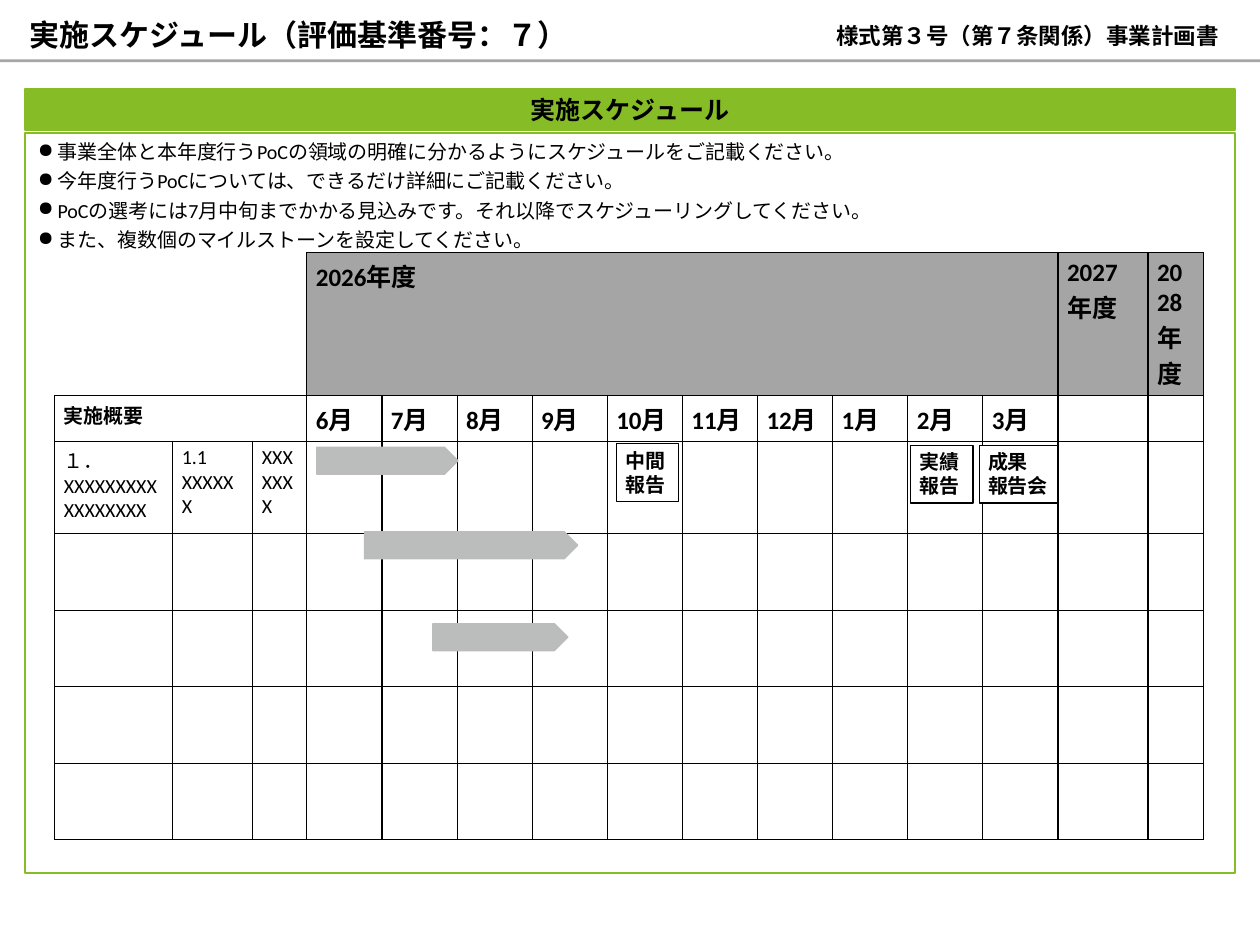
from lxml import etree
from pptx import Presentation
from pptx.dml.color import RGBColor
from pptx.enum import shapes, text
from pptx.oxml import ns
from pptx.util import Inches, Pt

COLORS = {"ink": "000000", "paper": "FFFFFF", "green": "86BC25", "gray": "A5A5A5", "bar": "BBBCBC"}
LATIN, JAPANESE = "Calibri", "Noto Sans CJK JP"
GUIDANCE = [
    "事業全体と本年度行うPoCの領域の明確に分かるようにスケジュールをご記載ください。",
    "今年度行うPoCについては、できるだけ詳細にご記載ください。",
    "PoCの選考には7月中旬までかかる見込みです。それ以降でスケジューリングしてください。",
    "また、複数個のマイルストーンを設定してください。",
]
MONTHS = [6, 7, 8, 9, 10, 11, 12, 1, 2, 3]
COLUMN_WIDTHS = [1.31, 0.89, 0.6] + [8.35 / len(MONTHS)] * len(MONTHS) + [1, 0.62]
ROW_HEIGHTS = [1.42, 0.5, 1.03] + [0.85] * 4
FISCAL_YEARS = {3: "2026年度", 13: "2027年度", 14: "2028年度"}
TASK = ["１．XXXXXXXXXXXXXXXXX", "1.1 XXXXXX", "XXXXXXX"]
BARS = [(3.52, 4.97, 1.57), (4.05, 5.91, 2.37), (4.81, 6.93, 1.5)]
MILESTONES = [
    (10.88, 4.95, 0.87, "成果\n報告会"),
    (10.12, 4.95, 0.69, "実績\n報告"),
    (6.85, 4.93, 0.69, "中間\n報告"),
]


def rgb(name):
    """Return the named colour."""
    return RGBColor.from_string(COLORS[name])


def write(frame, content, size, bold=True, align=text.PP_ALIGN.LEFT, latin=LATIN, east_asian=LATIN):
    """Fill a text frame and format its runs."""
    frame.text = content
    for paragraph in frame.paragraphs:
        paragraph.alignment = align
        for run in paragraph.runs:
            run.font.size, run.font.bold, run.font.name = Pt(size), bold, latin
            run.font.color.rgb = rgb("ink")
            etree.SubElement(run._r.get_or_add_rPr(), ns.qn("a:ea"), typeface=east_asian)


def set_insets(frame, horizontal, vertical):
    """Set equal side insets and equal top and bottom insets."""
    frame.margin_left = frame.margin_right = Inches(horizontal)
    frame.margin_top = frame.margin_bottom = Inches(vertical)


def add_block(slide, kind, place, fill, outline=None, width=1):
    """Add a filled preset shape."""
    block = slide.shapes.add_shape(kind, *map(Inches, place))
    block.shadow.inherit = False
    block.fill.solid()
    block.fill.fore_color.rgb = rgb(fill)
    if outline:
        block.line.color.rgb = rgb(outline)
        block.line.width = Pt(width)
    else:
        block.line.fill.background()
    return block


def add_heading(slide):
    """Place the title and the rule under it."""
    title = slide.shapes.title
    title.left, title.top, title.width, title.height = map(Inches, (0.33, 0.21, 6.87, 0.37))
    frame = title.text_frame
    set_insets(frame, 0, 0)
    frame.vertical_anchor = text.MSO_ANCHOR.BOTTOM
    write(frame, "実施スケジュール（評価基準番号：７）", 24)
    add_block(slide, shapes.MSO_SHAPE.RECTANGLE, (0, 0.66, 14, 0.03), "gray")


def add_form_label(slide):
    """Add the form number at the top right."""
    label = slide.shapes.add_textbox(*map(Inches, (9.11, 0.31, 4.61, 0.24)))
    frame = label.text_frame
    frame.word_wrap = True
    set_insets(frame, 0, 0)
    frame.vertical_anchor = text.MSO_ANCHOR.BOTTOM
    write(frame, "様式第３号（第７条関係）事業計画書", 18, True, text.PP_ALIGN.CENTER, JAPANESE, JAPANESE)


def add_panel(slide):
    """Add the green banner and the framed guidance list."""
    rectangle = shapes.MSO_SHAPE.RECTANGLE
    banner = add_block(slide, rectangle, (0.28, 0.99, 13.44, 0.46), "green", "green", 1.5).text_frame
    banner.word_wrap = False
    banner.vertical_anchor = text.MSO_ANCHOR.MIDDLE
    set_insets(banner, 0.14, 0.07)
    write(banner, "実施スケジュール", 20, align=text.PP_ALIGN.CENTER)

    guidance = add_block(slide, rectangle, (0.28, 1.48, 13.44, 8.22), "paper", "green", 1.5).text_frame
    guidance.word_wrap = True
    guidance.vertical_anchor = text.MSO_ANCHOR.TOP
    set_insets(guidance, 0.14, 0.07)
    write(guidance, "\n".join(GUIDANCE), 16, False)
    for index, paragraph in enumerate(guidance.paragraphs):
        paragraph.space_before = Pt(4.3 if index else 0)
        properties = paragraph._p.get_or_add_pPr()
        properties.set("marL", str(Inches(0.22)))
        properties.set("indent", str(-Inches(0.22)))
        etree.SubElement(properties, ns.qn("a:buChar"), char="●")


def set_borders(cell, hidden=""):
    """Draw the cell's edges, leaving out the hidden sides."""
    properties = cell._tc.get_or_add_tcPr()
    for index, side in enumerate("LRTB"):
        edge = etree.Element(ns.qn(f"a:ln{side}"), w=str(Pt(1)))
        if side in hidden:
            etree.SubElement(edge, ns.qn("a:noFill"))
        else:
            fill = etree.SubElement(edge, ns.qn("a:solidFill"))
            etree.SubElement(fill, ns.qn("a:srgbClr"), val=COLORS["ink"])
        properties.insert(index, edge)


def add_schedule(slide):
    """Add the schedule table."""
    place = map(Inches, (0.61, 2.81, sum(COLUMN_WIDTHS), sum(ROW_HEIGHTS)))
    schedule = slide.shapes.add_table(len(ROW_HEIGHTS), len(COLUMN_WIDTHS), *place).table
    schedule.first_row = schedule.horz_banding = False
    for column, width in zip(schedule.columns, COLUMN_WIDTHS):
        column.width = Inches(width)
    for row, height in zip(schedule.rows, ROW_HEIGHTS):
        row.height = Inches(height)
    for r in range(len(ROW_HEIGHTS)):
        for c in range(len(COLUMN_WIDTHS)):
            cell = schedule.cell(r, c)
            if r == 0 and c >= 3:
                cell.fill.solid()
                cell.fill.fore_color.rgb = rgb("gray")
            else:
                cell.fill.background()
            set_borders(cell, "LT" if r == 0 and c < 3 else "")
    for r, first, last in [(0, 0, 2), (0, 3, 12), (1, 0, 2)]:
        schedule.cell(r, first).merge(schedule.cell(r, last))

    entries = [(0, c, year, 20, True) for c, year in FISCAL_YEARS.items()]
    entries += [(1, 0, "実施概要", 16, True)]
    entries += [(1, c, f"{month}月", 20, True) for c, month in enumerate(MONTHS, 3)]
    entries += [(2, c, part, 16, False) for c, part in enumerate(TASK)]
    for r, c, content, size, bold in entries:
        write(schedule.cell(r, c).text_frame, content, size, bold, east_asian=JAPANESE)


def add_milestone(slide, left, top, width, content):
    """Add a boxed milestone."""
    place = (left, top, width, 0.64)
    frame = add_block(slide, shapes.MSO_SHAPE.RECTANGLE, place, "paper", "ink").text_frame
    frame.word_wrap = False
    frame.auto_size = text.MSO_AUTO_SIZE.SHAPE_TO_FIT_TEXT
    frame.vertical_anchor = text.MSO_ANCHOR.TOP
    write(frame, content, 16)


def main():
    """Build the schedule slide."""
    deck = Presentation()
    deck.slide_width, deck.slide_height = Inches(14), Inches(10.5)
    slide = deck.slides.add_slide(deck.slide_layouts[5])
    add_heading(slide)
    add_panel(slide)
    add_schedule(slide)
    for left, top, width in BARS:
        add_block(slide, shapes.MSO_SHAPE.PENTAGON, (left, top, width, 0.3), "bar", "bar")
    for milestone in MILESTONES:
        add_milestone(slide, *milestone)
    add_form_label(slide)
    deck.save("out.pptx")


if __name__ == "__main__":
    main()
